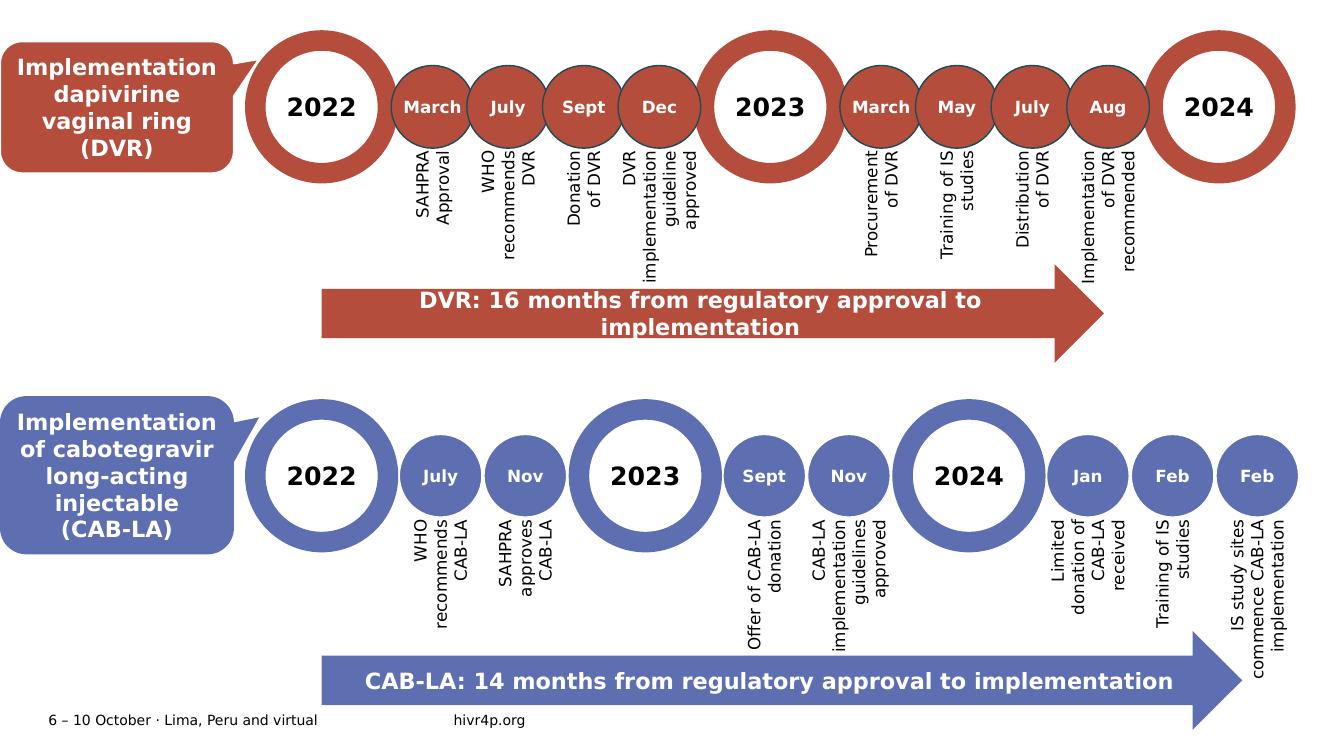
from pptx import Presentation
from pptx.dml.color import RGBColor
from pptx.enum.shapes import MSO_SHAPE as Kind
from pptx.enum.text import MSO_ANCHOR as Anchor, MSO_AUTO_SIZE as Auto, PP_ALIGN as Align
from pptx.util import Emu, Pt

SCALE = 9144
FONT = "DejaVu Sans"
RED, BLUE, TEAL = "B44D3C", "5D6EB1", "1E4B54"
WHITE, BLACK = "FFFFFF", "000000"
LEFT, RING, DISC = 243, 152, 82

RED_YEARS = [
    ("2022", [
        ("March", "SAHPRA Approval", 98, 2),
        ("July", "WHO recommends DVR", 122, 3),
        ("Sept", "Donation of DVR", 94, 2),
        ("Dec", "DVR implementation\nguideline approved", 150, 4),
    ]),
    ("2023", [
        ("March", "Procurement of DVR", 108, 2),
        ("May", "Training of IS studies", 108, 2),
        ("July", "Distribution of DVR", 108, 2),
        ("Aug", "Implementation of DVR recommended", 136, 3),
    ]),
    ("2024", []),
]
BLUE_YEARS = [
    ("2022", [
        ("July", "WHO recommends CAB-LA", 126, 3),
        ("Nov", "SAHPRA approves CAB-LA", 118, 3),
    ]),
    ("2023", [
        ("Sept", "Offer of CAB-LA donation", 152, 2),
        ("Nov", "CAB-LA implementation guidelines approved", 152, 4),
    ]),
    ("2024", [
        ("Jan", "Limited donation of CAB-LA received", 138, 4),
        ("Feb", "Training of IS studies", 108, 2),
        ("Feb", "IS study sites commence CAB-LA implementation", 176, 3),
    ]),
]


def px(value):
    return Emu(value * SCALE)


def tint(code):
    return RGBColor.from_string(code)


def write(shape, text, size, color, bold=False, align=Align.CENTER,
          anchor=Anchor.MIDDLE, inset=(0, 0), wrap=True):
    frame = shape.text_frame
    frame.word_wrap = wrap
    frame.vertical_anchor = anchor
    frame.margin_left = frame.margin_right = px(inset[0])
    frame.margin_top = frame.margin_bottom = px(inset[1])
    for index, line in enumerate(text.split("\n")):
        para = frame.add_paragraph() if index else frame.paragraphs[0]
        para.alignment = align
        run = para.add_run()
        run.text = line
        run.font.name = FONT
        run.font.size = Pt(size)
        run.font.bold = bold
        run.font.color.rgb = tint(color)


def draw(slide, kind, box, fill, line=None, width=1):
    shape = slide.shapes.add_shape(kind, *map(px, box))
    shape.shadow.inherit = False
    shape.fill.solid()
    shape.fill.fore_color.rgb = tint(fill)
    if line:
        shape.line.color.rgb = tint(line)
        shape.line.width = Pt(width)
    else:
        shape.line.fill.background()
    return shape


def add_year(slide, left, top, text, fill):
    ring = draw(slide, Kind.DONUT, (left, top, RING, RING), fill)
    ring.adjustments[0] = 0.134
    write(ring, text, 18, BLACK, True, inset=(10, 5))


def add_month(slide, left, top, text, fill, line):
    disc = draw(slide, Kind.OVAL, (left, top, DISC, DISC), fill, line)
    write(disc, text, 12, WHITE, True, wrap=False)


def add_label(slide, center, top, text, length, lines):
    height = 20 * lines + 1
    box = (center - length // 2, top + (length - height) // 2, length, height)
    label = slide.shapes.add_textbox(*map(px, box))
    label.rotation = 270
    write(label, text, 12, BLACK, align=Align.RIGHT, anchor=Anchor.TOP)
    label.text_frame.auto_size = Auto.SHAPE_TO_FIT_TEXT


def add_track(slide, top, years, pitch, start, step, fill, line):
    for index, (year, _) in enumerate(years):
        add_year(slide, LEFT + index * pitch, top, year, fill)
    for index, (_, events) in enumerate(years):
        for slot, (month, text, length, lines) in enumerate(events):
            left = LEFT + index * pitch + start + slot * step
            add_month(slide, left, top + 35, month, fill, line)
            add_label(slide, left + DISC // 2, top + 120, text, length, lines)


def add_arrow(slide, top, width, text, fill, inset):
    box = (LEFT + RING // 2, top, width, 98)
    arrow = draw(slide, Kind.RIGHT_ARROW, box, fill)
    write(arrow, text, 16, WHITE, True, inset=inset)


def add_title(slide, top, height, text, fill, line=None):
    box = (0, top, 232, height)
    title = draw(slide, Kind.ROUNDED_RECTANGULAR_CALLOUT, box, fill, line, 1.5)
    for index, value in enumerate((0.608, -0.366, 0.167)):
        title.adjustments[index] = value
    write(title, text, 16, WHITE, True, inset=(4, 4))


def add_foot(slide, left, width, text):
    foot = slide.shapes.add_textbox(*map(px, (left, 702, width, 24)))
    write(foot, text, 10, BLACK, align=Align.LEFT)


def main():
    deck = Presentation()
    deck.slide_width, deck.slide_height = px(1333), px(750)
    slide = deck.slides.add_slide(deck.slide_layouts[6])
    add_foot(slide, 48, 402, "6 – 10 October · Lima, Peru and virtual")
    add_foot(slide, 450, 193, "hivr4p.org")

    add_track(slide, 30, RED_YEARS, 445, 145, 75, RED, TEAL)
    add_title(slide, 41, 131, "Implementation dapivirine vaginal ring (DVR)", RED, WHITE)
    add_arrow(slide, 262, 776,
              "DVR: 16 months from regulatory approval to implementation", RED, (4, 5))

    add_arrow(slide, 626, 913,
              "CAB-LA: 14 months from regulatory approval to implementation", BLUE, (0, 5))
    add_track(slide, 396, BLUE_YEARS, 321, 153, 84, BLUE, WHITE)
    add_title(slide, 393, 157,
              "Implementation of cabotegravir long-acting injectable\n(CAB-LA)", BLUE)
    deck.save("out.pptx")


if __name__ == "__main__":
    main()
